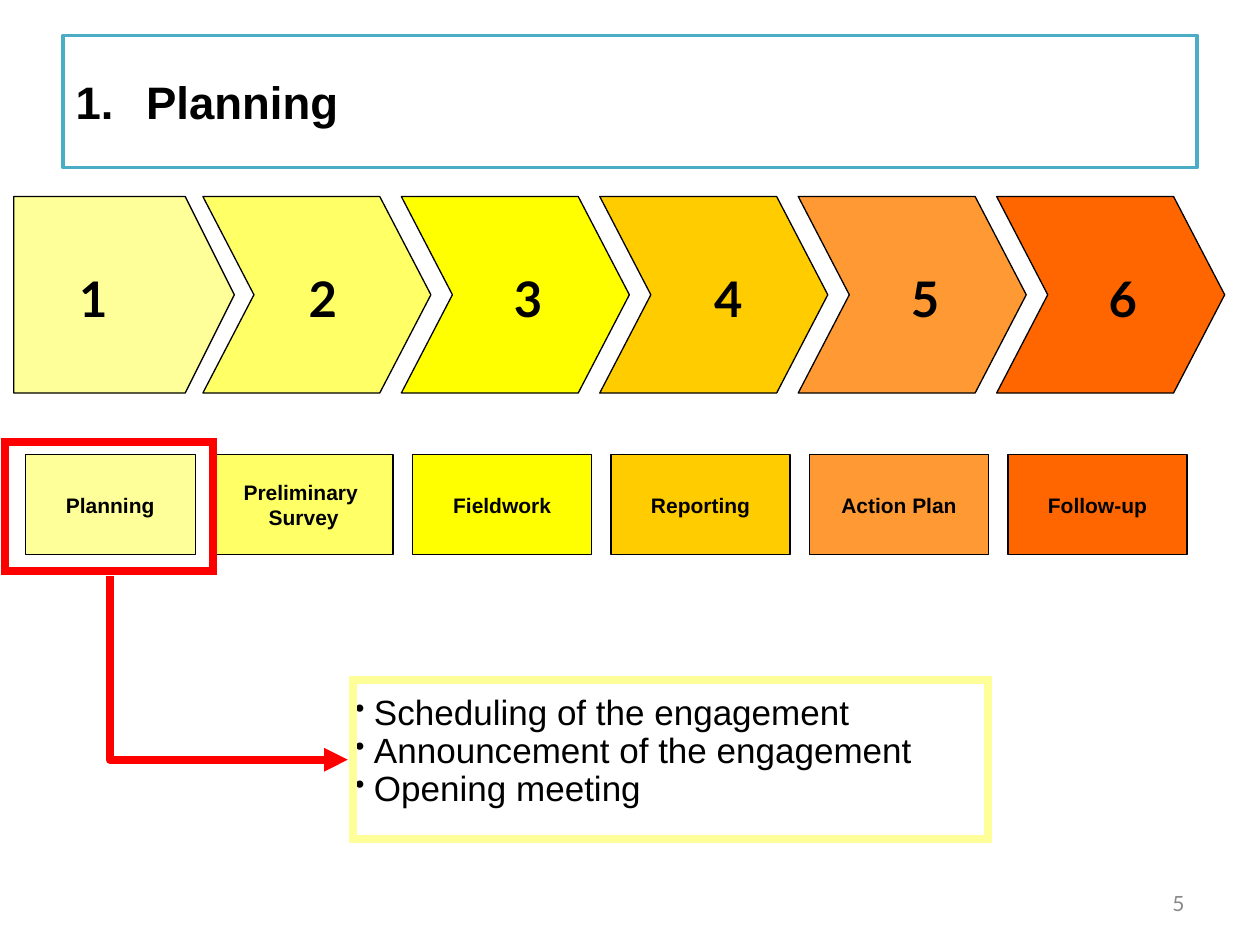
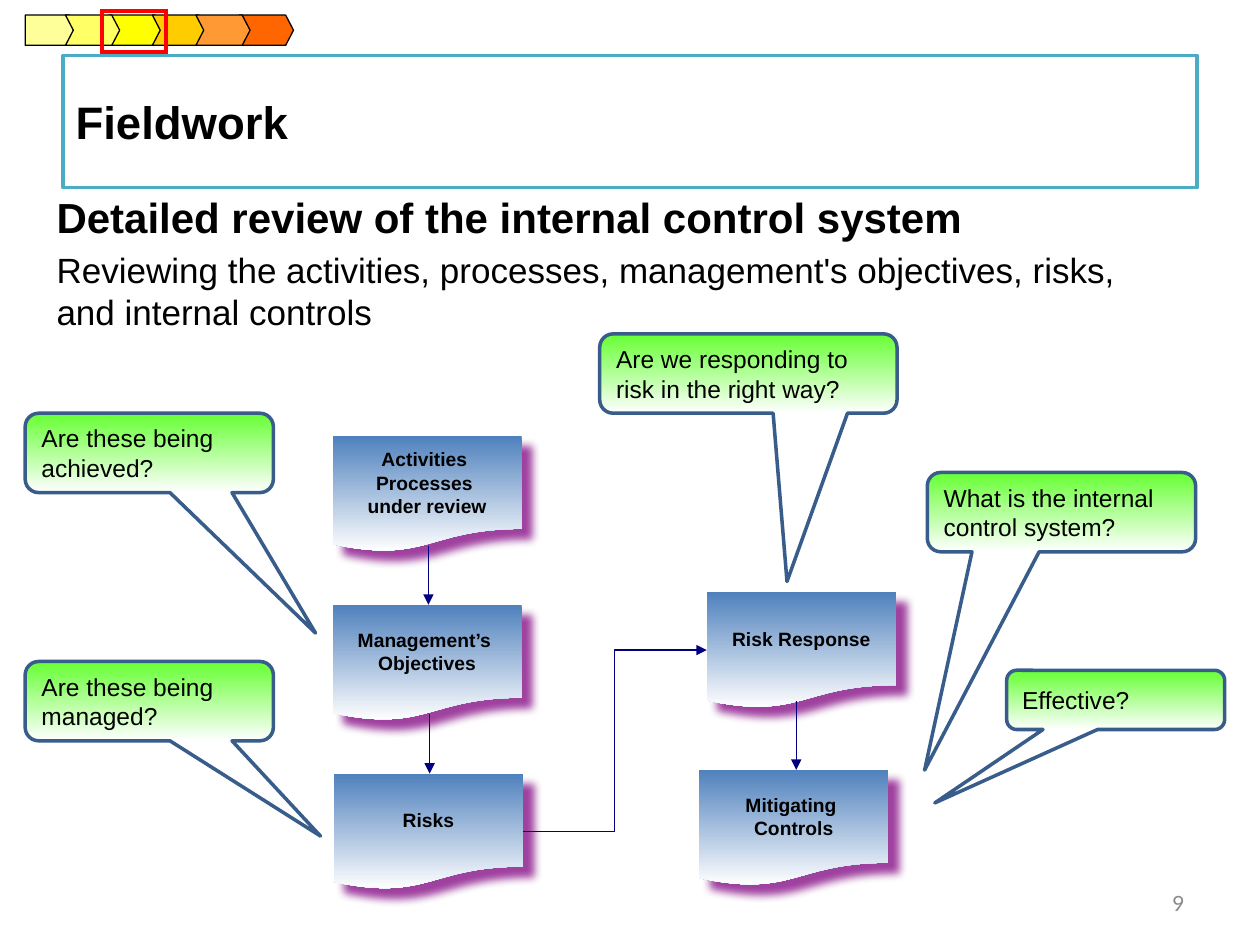
from dataclasses import dataclass

from pptx import Presentation
from pptx.dml.color import RGBColor
from pptx.enum import shapes, text
from pptx.oxml.ns import qn
from pptx.oxml.xmlchemy import OxmlElement
from pptx.util import Inches, Pt

SHAPE = shapes.MSO_SHAPE
LINK = shapes.MSO_CONNECTOR
ALIGN = text.PP_ALIGN
MIDDLE = text.MSO_ANCHOR.MIDDLE


@dataclass(frozen=True)
class Theme:
    font: str = "Arial"
    digits: str = "Lato"
    ink: str = "000000"
    paper: str = "FFFFFF"
    frame: str = "4BACC6"
    mark: str = "FF0000"
    arrow: str = "000080"
    doc: str = "4F81BD"
    shade: str = "800080"
    bubble: str = "66FF33"
    rim: str = "385D8A"
    grey: str = "898989"
    title: int = 26
    lead: int = 24
    body: int = 20
    number: int = 28
    ask: int = 14
    label: int = 12
    small: int = 11


T = Theme()
STEPS = [
    ("Planning", "FFFF99"),
    ("Preliminary \nSurvey", "FFFF66"),
    ("Fieldwork", "FFFF00"),
    ("Reporting", "FFCC00"),
    ("Action Plan", "FF9933"),
    ("Follow-up", "FF6600"),
]
STACK = [0, 2, 3, 5, 4, 1]  # back to front, where chevrons overlap


def rgb(code):
    return RGBColor.from_string(code)


def add_xml(parent, tag, **attrs):
    node = OxmlElement(tag)
    for key, value in attrs.items():
        node.set(key, str(value))
    parent.append(node)
    return node


def style(para, size, bold=False, align=ALIGN.LEFT, font=T.font, color=T.ink):
    para.alignment = align
    para.font.size = Pt(size)
    para.font.bold = bold
    para.font.name = font
    para.font.color.rgb = rgb(color)


def bullet(para, hang, tag, **attrs):
    """Give the paragraph a hanging indent and a bullet of the given tag."""
    props = para._p.get_or_add_pPr()
    props.set("marL", str(Inches(hang)))
    props.set("indent", str(-Inches(hang)))
    if tag == "a:buChar":
        add_xml(props, "a:buSzPct", val=80000)
    add_xml(props, tag, **attrs)


def stroke(line, color, width):
    line.color.rgb = rgb(color)
    line.width = Pt(width)


def add_shape(slide, kind, box, fill=None, line=None, width=0.75, adjust=()):
    shape = slide.shapes.add_shape(kind, *map(Inches, box))
    shape.shadow.inherit = False
    for i, value in enumerate(adjust):
        shape.adjustments[i] = value
    if fill:
        shape.fill.solid()
        shape.fill.fore_color.rgb = rgb(fill)
    else:
        shape.fill.background()
    if line:
        stroke(shape.line, line, width)
    else:
        shape.line.fill.background()
    return shape


def fade(shape, color):
    """Fill the shape from the colour at the top to white at the foot."""
    shape.fill.gradient()
    shape.fill.gradient_angle = 270
    for stop, code in zip(shape.fill.gradient_stops, (color, T.paper)):
        stop.color.rgb = rgb(code)


def write(shape, words, size, wrap=False, **look):
    frame = shape.text_frame
    frame.word_wrap = wrap
    frame.vertical_anchor = MIDDLE
    para = frame.paragraphs[0]
    para.text = words
    style(para, size, **look)


def add_text(slide, box, lines):
    """Add a text box; return its paragraphs, one for each line."""
    frame = slide.shapes.add_textbox(*map(Inches, box)).text_frame
    frame.word_wrap = True
    frame.text = "\n".join(lines)
    return frame.paragraphs


def add_title(slide, top, words):
    title = slide.shapes.title
    title.left, title.top, title.width, title.height = map(
        Inches, (0.5, top, 9, 1.05))
    title.fill.solid()
    title.fill.fore_color.rgb = rgb(T.paper)
    stroke(title.line, T.frame, 2)
    write(title, words, T.title, wrap=True, bold=True)
    title.text_frame.auto_size = text.MSO_AUTO_SIZE.NONE
    return title.text_frame.paragraphs[0]


def add_page(slide, number):
    para, = add_text(slide, (7.17, 7.02, 2.33, 0.3), [number])
    style(para, T.label, align=ALIGN.RIGHT, font=T.digits, color=T.grey)


def add_strip(slide, top, height, first, second, pitch):
    """Draw the step arrows; first and second are (left, width) pairs."""
    for i in STACK:
        left, width = second if i else first
        if i:
            left += pitch * (i - 1)
        kind = SHAPE.CHEVRON if i else SHAPE.PENTAGON
        add_shape(slide, kind, (left, top, width, height), STEPS[i][1],
                  T.ink, adjust=[0.26 if i else 0.25])


def add_frame(slide, box, color, width):
    shape = add_shape(slide, SHAPE.RECTANGLE, box, line=color, width=width)
    add_xml(shape.line._get_or_add_ln(), "a:miter", lim=800000)


def add_arrow(slide, kind, start, end, color=T.arrow, width=0.75):
    link = slide.shapes.add_connector(kind, *map(Inches, start + end))
    stroke(link.line, color, width)
    add_xml(link.line._get_or_add_ln(), "a:tailEnd", type="triangle")
    add_xml(link._element.spPr, "a:effectLst")
    return link


def add_corner(slide, start, end, color, width):
    """Draw an arrow that goes down, then right, with a single bend."""
    (x1, y1), (x2, y2) = start, end
    midx, midy = (x1 + x2) / 2, (y1 + y2) / 2
    half, rise = (y2 - y1) / 2, (x2 - x1) / 2
    link = add_arrow(slide, LINK.ELBOW, (midx + half, midy - rise),
                     (midx - half, midy + rise), color, width)
    props = link._element.spPr
    props.find(qn("a:xfrm")).set("rot", str(270 * 60000))
    props.find(qn("a:prstGeom")).set("prst", "bentConnector2")


def add_doc(slide, left, top, words):
    shape = add_shape(slide, SHAPE.FLOWCHART_DOCUMENT, (left, top, 1.5, 0.92))
    fade(shape, T.doc)
    write(shape, words, T.small, bold=True, align=ALIGN.CENTER)
    effects = shape._element.spPr.find(qn("a:effectLst"))
    cast = add_xml(effects, "a:outerShdw", blurRad=Pt(5), dist=Pt(8.5),
                   dir=45 * 60000, algn="ctr", rotWithShape=0)
    add_xml(add_xml(cast, "a:srgbClr", val=T.shade), "a:alpha", val=75000)


def add_bubble(slide, box, tip, words):
    shape = add_shape(slide, SHAPE.ROUNDED_RECTANGULAR_CALLOUT, box,
                      line=T.rim, width=2, adjust=[*tip, 0.17])
    fade(shape, T.bubble)
    write(shape, words, T.ask, wrap=True)


def draw_plan(slide):
    para = add_title(slide, 0.28, "Planning")
    bullet(para, 0.56, "a:buAutoNum", type="arabicPeriod")
    add_page(slide, "5")
    add_strip(slide, 1.56, 1.56, (0.11, 1.75), (1.61, 1.81), 1.575)

    digits = [0.53, 2.35, 3.98, 5.57, 7.13, 8.7]
    for i, (name, color) in enumerate(STEPS):
        left, width = (1.7 + 1.575 * (i - 1), 1.42) if i else (0.2, 1.35)
        label = add_shape(slide, SHAPE.RECTANGLE, (left, 3.61, width, 0.79),
                          color, T.ink)
        write(label, name, T.label, bold=True, align=ALIGN.CENTER)
        para, = add_text(slide, (digits[i], 2.08, 0.45, 0.57), [str(i + 1)])
        style(para, T.number, bold=True, font=T.digits)

    tasks = ["Scheduling of the engagement", "Announcement of the engagement",
             "Opening meeting"]
    for para in add_text(slide, (2.72, 5.47, 5, 1.01), tasks):
        style(para, T.body)
        para.line_spacing = 0.9
        bullet(para, 0.15, "a:buChar", char="•")

    add_frame(slide, (0.04, 3.51, 1.65, 1.02), T.mark, 4.5)
    add_frame(slide, (2.8, 5.4, 5.04, 1.26), STEPS[0][1], 4.5)
    add_corner(slide, (0.87, 4.57), (2.76, 6.03), T.mark, 4.5)


def draw_work(slide):
    add_title(slide, 0.44, "Fieldwork")
    add_page(slide, "9")
    lead, body = add_text(slide, (0.35, 1.47, 8.98, 1.42), [
        "Detailed review of the internal control system",
        "Reviewing the activities, processes, management's objectives, "
        "risks, and internal controls"])
    style(lead, T.lead, bold=True)
    style(body, T.body)
    lead.space_before, body.space_before = Pt(5), Pt(4)

    for doc in [
        (5.61, 4.7, "Risk Response"),
        (5.55, 6.11, "Mitigating \nControls"),
        (2.64, 3.46, "Activities \nProcesses \nunder review"),
        (2.64, 4.8, "Management’s \nObjectives"),
        (2.65, 6.14, "Risks"),
    ]:
        add_doc(slide, *doc)

    for x, top, foot in [(3.4, 4.33, 4.8), (3.41, 5.67, 6.14),
                         (6.32, 5.56, 6.11)]:
        add_arrow(slide, LINK.STRAIGHT, (x, top), (x, foot))
    add_arrow(slide, LINK.ELBOW, (4.15, 6.6), (5.61, 5.16))

    for bubble in [
        ((7.36, 3.75, 2.13, 0.63), (-0.51, 3.25),
         "What is the internal control system?"),
        ((7.99, 5.32, 1.73, 0.47), (-0.83, 1.74), "Effective?"),
        ((0.2, 5.25, 1.97, 0.63), (0.69, 1.7), "Are these being managed?"),
        ((0.2, 3.28, 1.97, 0.63), (0.67, 2.27), "Are these being achieved?"),
        ((4.76, 2.65, 2.36, 0.63), (0.13, 2.62),
         "Are we responding to risk in the right way?"),
    ]:
        add_bubble(slide, *bubble)

    add_strip(slide, 0.12, 0.24, (0.2, 0.41), (0.52, 0.43), 0.345)
    add_frame(slide, (0.81, 0.09, 0.51, 0.32), T.mark, 2.25)


def main():
    deck = Presentation()
    deck.slide_width, deck.slide_height = Inches(10), Inches(7.5)
    layout = deck.slide_layouts.get_by_name("Title Only")
    for draw in (draw_plan, draw_work):
        draw(deck.slides.add_slide(layout))
    deck.save("out.pptx")


if __name__ == "__main__":
    main()
